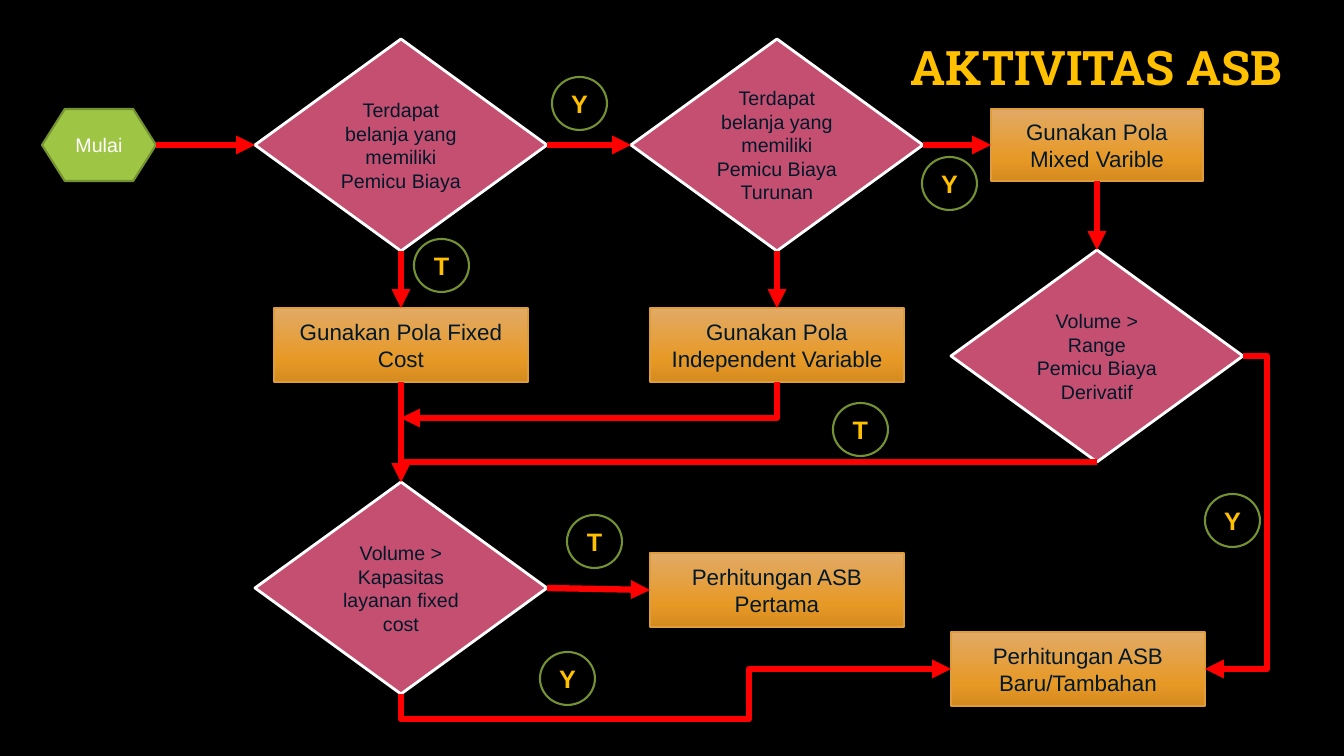
from copy import deepcopy

from pptx import Presentation, util as u
from pptx.dml.color import RGBColor
from pptx.enum import shapes as s, text as t
from pptx.oxml.ns import qn
from pptx.oxml.xmlchemy import OxmlElement

COLORS = {
    "background": "000000", "title": "FFC000", "ink": "011829", "white": "FFFFFF",
    "decision": "C54F71", "start": "9EC544", "olive": "759232", "arrow": "FF0000",
    "process edge": "DE9C3C",
}
PROCESS_GRADIENT = [(0, "E2AA66"), (0.69, "E79926"), (1, "D68B1F")]

KINDS = {
    "start": dict(preset="FLOWCHART_PREPARATION", size=(114, 72), fill="start",
                  edge="olive", weight=1.5, ink="white", points=14, bold=False),
    "decision": dict(preset="DIAMOND", size=(292, 212), fill="decision",
                     edge="white", weight=2, ink="ink", points=14, bold=False),
    "process": dict(preset="FLOWCHART_PROCESS", size=(254, 74), fill="gradient",
                    edge="process edge", weight=1, ink="ink", points=16, bold=False),
    "short process": dict(preset="FLOWCHART_PROCESS", size=(212, 72), fill="gradient",
                          edge="process edge", weight=1, ink="ink", points=16, bold=False),
    "answer": dict(preset="OVAL", size=(55, 53), fill=None,
                   edge="olive", weight=1.5, ink="title", points=18, bold=True),
}

TITLE = ("AKTIVITAS ASB", (847, 39, 499, 60))
STEPS = {
    "mulai": ("start", (42, 109), "Mulai"),
    "pemicu": ("decision", (255, 39), "Terdapat belanja yang memiliki Pemicu Biaya"),
    "turunan": ("decision", (631, 39), "Terdapat belanja yang memiliki Pemicu Biaya Turunan"),
    "kapasitas": ("decision", (255, 482), "Volume > Kapasitas layanan fixed cost"),
    "derivatif": ("decision", (951, 250), "Volume > Range Pemicu Biaya Derivatif"),
    "fixed": ("process", (274, 308), "Gunakan Pola Fixed Cost"),
    "independent": ("process", (650, 308), "Gunakan Pola Independent Variable"),
    "mixed": ("short process", (991, 109), "Gunakan Pola Mixed Varible"),
    "pertama": ("process", (650, 553), "Perhitungan ASB Pertama"),
    "baru": ("process", (951, 632), "Perhitungan ASB Baru/Tambahan"),
}
ANSWERS = [
    ("Y", (552, 77)), ("T", (567, 515)), ("Y", (922, 157)), ("Y", (1205, 494)),
    ("Y", (540, 652)), ("T", (414, 239)), ("T", (833, 403)),
]

TOP, LEFT, BOTTOM, RIGHT = range(4)
STRAIGHT_LINKS = [
    ("mulai", RIGHT, "pemicu", LEFT),
    ("pemicu", RIGHT, "turunan", LEFT),
    ("turunan", RIGHT, "mixed", LEFT),
    ("pemicu", BOTTOM, "fixed", TOP),
    ("turunan", BOTTOM, "independent", TOP),
    ("mixed", BOTTOM, "derivatif", TOP),
    ("fixed", BOTTOM, "kapasitas", TOP),
    ("kapasitas", RIGHT, "pertama", LEFT),
]
MERGE_POINT = (401, 418)
# start, end, preset, rotation, flips, adjustments
ELBOW_LINKS = [
    (("independent", BOTTOM), MERGE_POINT, "bentConnector2", 90, "", []),
    (("derivatif", BOTTOM), ("kapasitas", TOP), "bentConnector2", 180, "V", []),
    (("derivatif", RIGHT), ("baru", RIGHT), "bentConnector3", 0, "H", [-64300]),
    (("kapasitas", BOTTOM), ("baru", LEFT), "bentConnector4", 90, "HV", [-100800, 63300]),
]

PX = u.Inches(1) / 100.8


def emu(*lengths):
    return [round(length * PX) for length in lengths]


def rgb(name):
    return RGBColor.from_string(COLORS[name])


def write(shape, wording, ink, points, bold, font="Arial"):
    frame = shape.text_frame
    frame.word_wrap = True
    paragraph = frame.paragraphs[0]
    paragraph.alignment = t.PP_ALIGN.CENTER
    run = paragraph.add_run()
    run.text = wording
    for name, value in dict(name=font, size=u.Pt(points), bold=bold).items():
        setattr(run.font, name, value)
    run.font.color.rgb = rgb(ink)
    return paragraph


def paint(shape, fill):
    if fill is None:
        shape.fill.background()
    elif fill == "gradient":
        shape.fill.gradient()
        shape.fill.gradient_angle = 270
        stops = shape.fill.gradient_stops
        stop_list = next(shape.element.iter(qn("a:gsLst")))
        stop_list.append(deepcopy(stop_list[-1]))
        for stop, (position, color) in zip(shape.fill.gradient_stops, PROCESS_GRADIENT):
            stop.position = position
            stop.color.rgb = RGBColor.from_string(color)
    else:
        shape.fill.solid()
        shape.fill.fore_color.rgb = rgb(fill)


def add_step(slide, kind, corner, wording):
    look = KINDS[kind]
    shape = slide.shapes.add_shape(
        getattr(s.MSO_SHAPE, look["preset"]), *emu(*corner, *look["size"]))
    shape.shadow.inherit = False
    paint(shape, look["fill"])
    shape.line.color.rgb = rgb(look["edge"])
    shape.line.width = u.Pt(look["weight"])
    shape.text_frame.vertical_anchor = t.MSO_ANCHOR.MIDDLE
    write(shape, wording, look["ink"], look["points"], look["bold"])
    return shape


def side_point(step, side):
    """Middle of one side of a step, in px."""
    kind, (x, y), _ = STEPS[step]
    w, h = KINDS[kind]["size"]
    return [(x + w / 2, y), (x, y + h / 2), (x + w / 2, y + h), (x + w, y + h / 2)][side]


def add_arrow(slide, kind, *ends):
    arrow = slide.shapes.add_connector(kind, *emu(*ends))
    arrow.line.color.rgb = rgb("arrow")
    arrow.line.width = u.Pt(4.5)
    head = OxmlElement("a:tailEnd")
    head.set("type", "triangle")
    arrow.line._get_or_add_ln().append(head)
    arrow.element.spPr.append(OxmlElement("a:effectLst"))
    return arrow


def add_elbow(slide, start, end, preset, rotation, flips, adjustments):
    """Bent arrow whose box is turned about the middle between its ends."""
    (x1, y1), (x2, y2) = [
        side_point(*place) if isinstance(place[0], str) else place for place in (start, end)]
    w, h = abs(x2 - x1), abs(y2 - y1)
    if rotation == 90:
        w, h = h, w
    left, top = (x1 + x2 - w) / 2, (y1 + y2 - h) / 2
    arrow = add_arrow(slide, s.MSO_CONNECTOR.ELBOW, left, top, left + w, top + h)
    frame = arrow.element.spPr.find(qn("a:xfrm"))
    frame.set("rot", str(rotation * 60000))
    for flip in flips:
        frame.set("flip" + flip, "1")
    geometry = arrow.element.spPr.find(qn("a:prstGeom"))
    geometry.set("prst", preset)
    guides = geometry.find(qn("a:avLst"))
    for number, value in enumerate(adjustments, 1):
        guide = OxmlElement("a:gd")
        guide.set("name", f"adj{number}")
        guide.set("fmla", f"val {value}")
        guides.append(guide)


def main():
    deck = Presentation()
    deck.slide_width, deck.slide_height = emu(1344, 756)
    slide = deck.slides.add_slide(deck.slide_layouts[6])
    slide.background.fill.solid()
    slide.background.fill.fore_color.rgb = rgb("background")

    wording, box = TITLE
    title = slide.shapes.add_textbox(*emu(*box))
    write(title, wording, "title", 34, True, "Roboto Slab").line_spacing = 0.9

    steps = {key: add_step(slide, *step) for key, step in STEPS.items()}
    for source, source_side, target, target_side in STRAIGHT_LINKS:
        arrow = add_arrow(slide, s.MSO_CONNECTOR.STRAIGHT,
                          *side_point(source, source_side), *side_point(target, target_side))
        arrow.begin_connect(steps[source], source_side)
        arrow.end_connect(steps[target], target_side)
    for link in ELBOW_LINKS:
        add_elbow(slide, *link)
    for letter, corner in ANSWERS:
        add_step(slide, "answer", corner, letter)

    deck.save("out.pptx")


if __name__ == "__main__":
    main()
